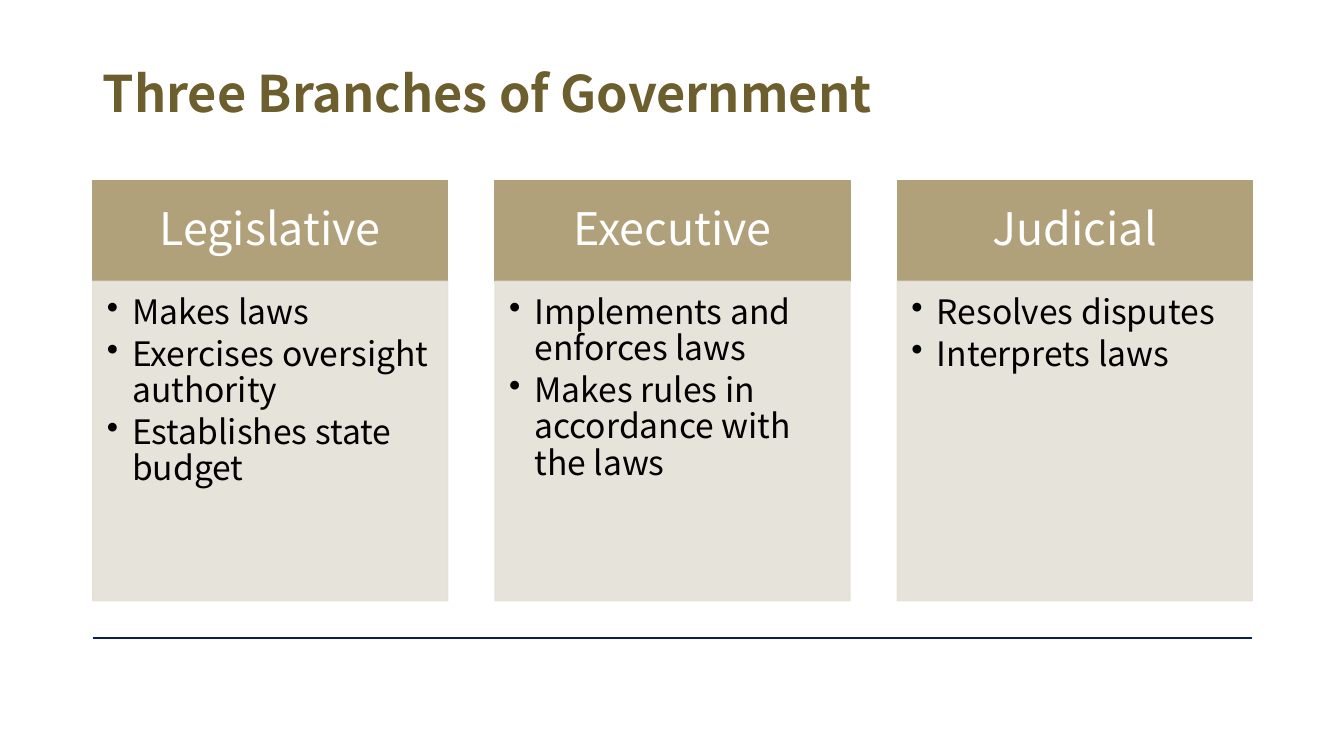
from dataclasses import dataclass

from lxml.etree import SubElement
from pptx import Presentation
from pptx.dml.color import RGBColor
from pptx.enum.shapes import MSO_CONNECTOR, MSO_SHAPE
from pptx.enum.text import MSO_ANCHOR, MSO_AUTO_SIZE, PP_ALIGN
from pptx.oxml.ns import qn
from pptx.shapes.autoshape import Shape
from pptx.slide import Slide
from pptx.util import Inches, Pt


@dataclass(frozen=True)
class Theme:
    font: str = "Noto Sans CJK KR"
    title: str = "6D5E2D"
    header: str = "B0A17A"
    panel: str = "E4E0D7"
    panel_opacity: int = 90
    rule: str = "05224D"
    light: str = "FFFFFF"
    dark: str = "000000"
    title_size: int = 36
    header_size: int = 32
    body_size: int = 24


@dataclass(frozen=True)
class Grid:
    """Equal columns between the margins; all lengths in inches."""
    left: float = 0.92
    width: float = 11.5
    columns: int = 3
    column_width: float = 3.52
    title_top: float = 0.4
    title_height: float = 1.1
    header_top: float = 1.79
    header_height: float = 1.0
    panel_height: float = 3.17
    rule_top: float = 6.33

    @property
    def panel_top(self) -> float:
        return self.header_top + self.header_height

    def column_left(self, index: int) -> float:
        pitch = (self.width - self.column_width) / (self.columns - 1)
        return self.left + index * pitch


@dataclass(frozen=True)
class Branch:
    name: str
    duties: tuple[str, ...]


THEME = Theme()
GRID = Grid()
BRANCHES = (
    Branch("Legislative", ("Makes laws", "Exercises oversight authority",
                           "Establishes state budget")),
    Branch("Executive", ("Implements and enforces laws",
                         "Makes rules in accordance with the laws")),
    Branch("Judicial", ("Resolves disputes", "Interprets laws")),
)


def style_paragraph(p, size: int, color: str, bold: bool = False) -> None:
    p.line_spacing = 0.9
    for r in p.runs:
        r.font.name = THEME.font
        r.font.size = Pt(size)
        r.font.bold = bold
        r.font.color.rgb = RGBColor.from_string(color)


def add_bullet(p) -> None:
    pPr = p._p.get_or_add_pPr()
    pPr.set("marL", str(Inches(0.25)))
    pPr.set("indent", str(-Inches(0.25)))
    SubElement(pPr, qn("a:buChar")).set("char", "•")


def add_block(slide: Slide, column: int, top: float, height: float, color: str,
              insets: tuple[float, float, float, float]) -> Shape:
    """Add a column-wide rectangle; insets run left, top, right, bottom."""
    sp = slide.shapes.add_shape(
        MSO_SHAPE.RECTANGLE, Inches(GRID.column_left(column)), Inches(top),
        Inches(GRID.column_width), Inches(height))
    sp.shadow.inherit = False
    sp.fill.solid()
    sp.fill.fore_color.rgb = RGBColor.from_string(color)
    sp.line.color.rgb = RGBColor.from_string(color)
    sp.line.width = Pt(1)
    tf = sp.text_frame
    tf.word_wrap = True
    tf.margin_left, tf.margin_top, tf.margin_right, tf.margin_bottom = map(Inches, insets)
    return sp


def add_header(slide: Slide, column: int, name: str) -> None:
    sp = add_block(slide, column, GRID.header_top, GRID.header_height,
                   THEME.header, (0.25, 0.14, 0.25, 0.14))
    tf = sp.text_frame
    tf.text = name
    tf.vertical_anchor = MSO_ANCHOR.MIDDLE
    p = tf.paragraphs[0]
    p.alignment = PP_ALIGN.CENTER
    style_paragraph(p, THEME.header_size, THEME.light)


def add_panel(slide: Slide, column: int, duties: tuple[str, ...]) -> None:
    sp = add_block(slide, column, GRID.panel_top, GRID.panel_height,
                   THEME.panel, (0.14, 0.14, 0.19, 0.21))
    for color in sp._element.spPr.iter(qn("a:srgbClr")):
        SubElement(color, qn("a:alpha")).set("val", str(THEME.panel_opacity * 1000))
    tf = sp.text_frame
    tf.text = "\n".join(duties)
    tf.vertical_anchor = MSO_ANCHOR.TOP
    for p in tf.paragraphs:
        add_bullet(p)
        p.level = 1
        p.alignment = PP_ALIGN.LEFT
        p.space_after = Pt(4)
        style_paragraph(p, THEME.body_size, THEME.dark)


def set_title(slide: Slide, text: str) -> None:
    sp = slide.shapes.title
    sp.left, sp.top = Inches(GRID.left), Inches(GRID.title_top)
    sp.width, sp.height = Inches(GRID.width), Inches(GRID.title_height)
    tf = sp.text_frame
    tf.text = text
    tf.auto_size = MSO_AUTO_SIZE.NONE
    tf.vertical_anchor = MSO_ANCHOR.MIDDLE
    p = tf.paragraphs[0]
    p.alignment = PP_ALIGN.LEFT
    style_paragraph(p, THEME.title_size, THEME.title, bold=True)


def add_rule(slide: Slide) -> None:
    y = Inches(GRID.rule_top)
    line = slide.shapes.add_connector(
        MSO_CONNECTOR.STRAIGHT, Inches(GRID.left), y,
        Inches(GRID.left + GRID.width), y)
    line.line.color.rgb = RGBColor.from_string(THEME.rule)
    line.line.width = Pt(1)
    SubElement(line._element.spPr, qn("a:effectLst"))


def main() -> None:
    prs = Presentation()
    prs.slide_width, prs.slide_height = Inches(13.33), Inches(7.5)
    slide = prs.slides.add_slide(prs.slide_layouts.get_by_name("Title Only"))
    set_title(slide, "Three Branches of Government")
    add_rule(slide)
    for column, branch in enumerate(BRANCHES):
        add_header(slide, column, branch.name)
        add_panel(slide, column, branch.duties)
    prs.save("out.pptx")


if __name__ == "__main__":
    main()
